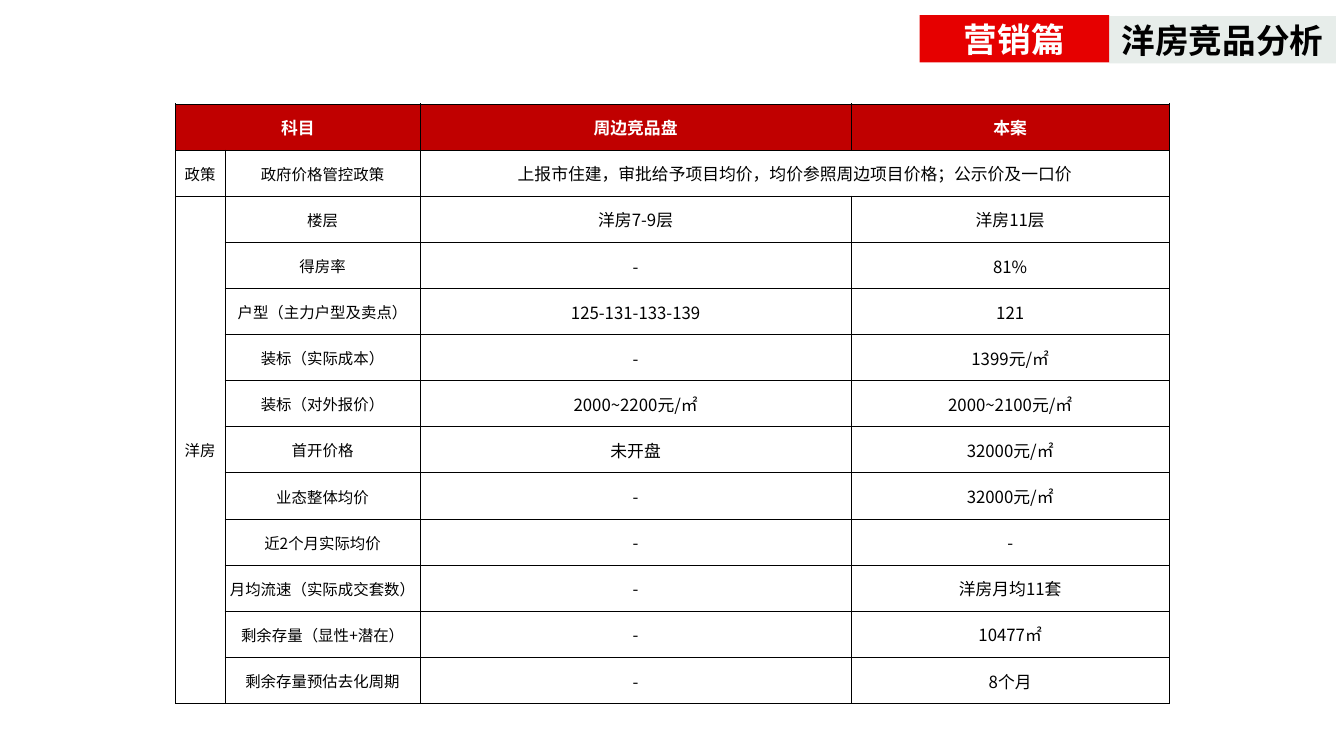
from lxml.etree import SubElement
from pptx import Presentation
from pptx.dml.color import RGBColor
from pptx.enum.shapes import MSO_SHAPE
from pptx.enum.text import MSO_ANCHOR, PP_ALIGN
from pptx.oxml.ns import qn
from pptx.util import Inches, Pt

FONT = "Noto Sans CJK SC"
BLACK = RGBColor(0, 0, 0)
WHITE = RGBColor(255, 255, 255)
BRIGHT_RED = RGBColor(0xE6, 0, 0)
DARK_RED = RGBColor(0xC0, 0, 0)
PALE_GREY = RGBColor(0xE7, 0xED, 0xEA)

COLUMN_WIDTHS = [0.49, 1.94, 4.27, 3.16]
COMPARISON = [
    ("科目", "", "周边竞品盘", "本案"),
    ("政策", "政府价格管控政策", "上报市住建，审批给予项目均价，均价参照周边项目价格；公示价及一口价", ""),
    ("洋房", "楼层", "洋房7-9层", "洋房11层"),
    ("", "得房率", "-", "81%"),
    ("", "户型（主力户型及卖点）", "125-131-133-139", "121"),
    ("", "装标（实际成本）", "-", "1399元/㎡"),
    ("", "装标（对外报价）", "2000~2200元/㎡", "2000~2100元/㎡"),
    ("", "首开价格", "未开盘", "32000元/㎡"),
    ("", "业态整体均价", "-", "32000元/㎡"),
    ("", "近2个月实际均价", "-", "-"),
    ("", "月均流速（实际成交套数）", "-", "洋房月均11套"),
    ("", "剩余存量（显性+潜在）", "-", "10477㎡"),
    ("", "剩余存量预估去化周期", "-", "8个月"),
]
MERGES = [((0, 0), (0, 1)), ((1, 2), (1, 3)), ((2, 0), (12, 0))]


def write_centred(text_frame, wording, size, color, bold):
    text_frame.text = wording
    paragraph = text_frame.paragraphs[0]
    paragraph.alignment = PP_ALIGN.CENTER
    for run in paragraph.runs:
        run.font.size = Pt(size)
        run.font.bold = bold
        run.font.color.rgb = color
        run.font.name = FONT
        SubElement(run.font._element, qn("a:ea"), typeface=FONT)


def add_banner(slide, left, top, width, height, wording, fill, color):
    banner = slide.shapes.add_shape(
        MSO_SHAPE.RECTANGLE, Inches(left), Inches(top), Inches(width), Inches(height))
    banner.shadow.inherit = False
    banner.fill.solid()
    banner.fill.fore_color.rgb = fill
    banner.line.fill.background()
    frame = banner.text_frame
    frame.margin_left = frame.margin_right = 0
    frame.vertical_anchor = MSO_ANCHOR.MIDDLE
    write_centred(frame, wording, 24, color, True)


def add_heading(slide, left, top, height):
    chapter_width, topic_width = 1.88, 2.25
    add_banner(slide, left + chapter_width, top + 0.01, topic_width, height,
               "洋房竞品分析", PALE_GREY, BLACK)
    add_banner(slide, left, top, chapter_width, height, "营销篇", BRIGHT_RED, WHITE)


def add_borders(cell):
    properties = cell._tc.get_or_add_tcPr()
    for side in ("lnL", "lnR", "lnT", "lnB"):
        border = SubElement(properties, qn(f"a:{side}"), w=str(Pt(0.5)))
        SubElement(SubElement(border, qn("a:solidFill")), qn("a:srgbClr"), val=str(BLACK))


def style_cell(cell, wording, row, column):
    is_header = row == 0
    cell.margin_left = cell.margin_right = cell.margin_top = Inches(0.01)
    cell.margin_bottom = 0
    cell.vertical_anchor = MSO_ANCHOR.MIDDLE
    add_borders(cell)
    if is_header:
        cell.fill.solid()
        cell.fill.fore_color.rgb = DARK_RED
    else:
        cell.fill.background()
    size = 12 if is_header or column >= 2 else 11
    write_centred(cell.text_frame, wording, size, WHITE if is_header else BLACK, is_header)


def add_comparison(slide, left, top, width, height):
    comparison = slide.shapes.add_table(
        len(COMPARISON), len(COLUMN_WIDTHS),
        Inches(left), Inches(top), Inches(width), Inches(height)).table
    comparison.first_row = False
    comparison.horz_banding = False
    for column, share in zip(comparison.columns, COLUMN_WIDTHS):
        column.width = Inches(width * share / sum(COLUMN_WIDTHS))
    for row in comparison.rows:
        row.height = Inches(height / len(COMPARISON))
    for row, entries in enumerate(COMPARISON):
        for column, wording in enumerate(entries):
            style_cell(comparison.cell(row, column), wording, row, column)
    for first, last in MERGES:
        comparison.cell(*first).merge(comparison.cell(*last))


def main():
    presentation = Presentation()
    presentation.slide_width = Inches(13.33)
    presentation.slide_height = Inches(7.5)
    slide = presentation.slides.add_slide(presentation.slide_layouts[6])
    add_heading(slide, 9.12, 0.15, 0.47)
    add_comparison(slide, 1.74, 1.03, 9.86, 5.95)
    presentation.save("out.pptx")


if __name__ == "__main__":
    main()
